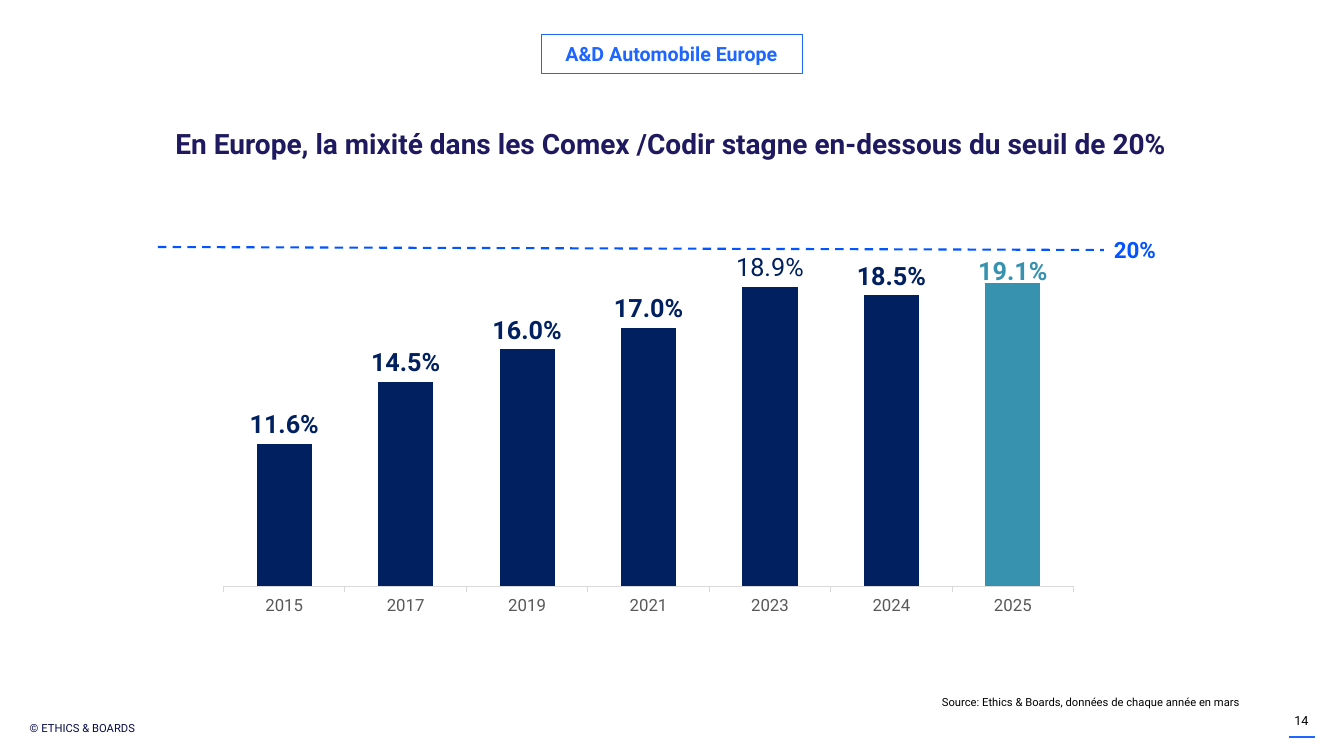
from lxml.etree import SubElement
from pptx import Presentation
from pptx.chart.data import CategoryChartData
from pptx.dml.color import RGBColor
from pptx.enum.chart import XL_CHART_TYPE, XL_LABEL_POSITION, XL_TICK_LABEL_POSITION, XL_TICK_MARK
from pptx.enum.dml import MSO_LINE
from pptx.enum.shapes import MSO_CONNECTOR, MSO_SHAPE
from pptx.enum.text import MSO_ANCHOR, MSO_AUTO_SIZE, PP_ALIGN
from pptx.oxml import parse_xml
from pptx.oxml.ns import nsdecls, qn
from pptx.util import Emu, Pt

PX = 914400 / 100.8
FONT = "Roboto"
BLUE, DASH_BLUE, NAVY, TEAL = "1E66FF", "0353FF", "002060", "3792B0"
RATES = {"2015": 0.116, "2017": 0.145, "2019": 0.16, "2021": 0.17,
         "2023": 0.189, "2024": 0.185, "2025": 0.191}


def px(length):
    """Turn a length in px into EMU."""
    return Emu(round(length * PX))


def color(value):
    """Turn a hex string into a colour."""
    return RGBColor.from_string(value)


def set_attributes(target, **values):
    """Set each named attribute of the target."""
    for name, value in values.items():
        setattr(target, name, value)


def style_font(font, size, hex_color, bold=False):
    """Give a font its face, size, colour and weight."""
    set_attributes(font, name=FONT, size=Pt(size), bold=bold)
    font.color.rgb = color(hex_color)


def style_line(line, hex_color, width):
    """Give a line its colour and width."""
    line.color.rgb = color(hex_color)
    line.width = Pt(width)


def write(shape, text, size, hex_color, bold=False, align=PP_ALIGN.CENTER,
          anchor=MSO_ANCHOR.MIDDLE, wrap=True):
    """Fill a shape with one formatted paragraph."""
    frame = shape.text_frame
    set_attributes(frame, text=text, word_wrap=wrap, vertical_anchor=anchor,
                   auto_size=MSO_AUTO_SIZE.NONE)
    paragraph = frame.paragraphs[0]
    paragraph.alignment = align
    style_font(paragraph.runs[0].font, size, hex_color, bold)


def add_text(slide, box, *content, **options):
    """Add a text box."""
    write(slide.shapes.add_textbox(*map(px, box)), *content, **options)


def add_title(slide, box, *content, **options):
    """Move and fill the title placeholder."""
    title = slide.shapes.title
    set_attributes(title, **dict(zip(("left", "top", "width", "height"), map(px, box))))
    write(title, *content, **options)


def add_tag(slide, box, *content, **options):
    """Add an outlined rectangle with text."""
    tag = slide.shapes.add_shape(MSO_SHAPE.RECTANGLE, *map(px, box))
    tag.shadow.inherit = False
    tag.fill.background()
    style_line(tag.line, BLUE, 0.5)
    write(tag, *content, **options)


def add_line(slide, ends, hex_color, dash=None):
    """Add a straight line."""
    line = slide.shapes.add_connector(MSO_CONNECTOR.STRAIGHT, *map(px, ends))
    style_line(line.line, hex_color, 1.5)
    line.line.dash_style = dash
    SubElement(line._element.spPr, qn("a:effectLst"))


def manual_layout(**values):
    """Build a manual chart layout."""
    items = "".join(f'<c:{name} val="{value}"/>' for name, value in values.items())
    return parse_xml(f'<c:layout {nsdecls("c")}><c:manualLayout>{items}'
                     '</c:manualLayout></c:layout>')


def style_axes(chart):
    """Show only the year axis."""
    set_attributes(chart.value_axis, minimum_scale=0.05, maximum_scale=0.2,
                   has_major_gridlines=False, visible=False)
    years = chart.category_axis
    set_attributes(years, major_tick_mark=XL_TICK_MARK.OUTSIDE,
                   minor_tick_mark=XL_TICK_MARK.NONE, has_major_gridlines=False,
                   tick_label_position=XL_TICK_LABEL_POSITION.LOW)
    style_line(years.format.line, "D9D9D9", 0.75)
    style_font(years.tick_labels.font, 12, "595959")


def style_labels(plot, series):
    """Label the bars, with 2023 in regular weight and 2025 in teal."""
    plot.has_data_labels = True
    labels = series.data_labels
    set_attributes(labels, show_value=True, number_format="0.0%",
                   number_format_is_linked=False, position=XL_LABEL_POSITION.OUTSIDE_END)
    style_font(labels.font, 18, NAVY, True)

    years = list(RATES)
    regular = series.points[years.index("2023")].data_label
    regular.text_frame.text = f"{RATES['2023']:.1%}"
    style_font(regular.text_frame.paragraphs[0].runs[0].font, 18, NAVY)
    regular.position = XL_LABEL_POSITION.OUTSIDE_END

    latest = series.points[years.index("2025")].data_label
    style_font(latest.font, 18, TEAL, True)
    latest.position = XL_LABEL_POSITION.OUTSIDE_END
    label_element = latest.font._element.getparent().getparent().getparent().getparent()
    label_element.find(qn("c:idx")).addnext(manual_layout(x=0, y=0.02))


def add_rate_chart(slide, box):
    """Add the column chart of rates by year."""
    data = CategoryChartData(number_format="0.0%")
    data.categories = list(RATES)
    data.add_series("Series 1", list(RATES.values()))
    chart = slide.shapes.add_chart(XL_CHART_TYPE.COLUMN_CLUSTERED, *map(px, box), data).chart
    set_attributes(chart, has_legend=False, has_title=False)
    style_font(chart.font, 10, "000000")
    style_axes(chart)

    plot = chart.plots[0]
    set_attributes(plot, gap_width=120, vary_by_categories=False)
    series = plot.series[0]
    latest = series.points[len(RATES) - 1]
    for bar, hex_color in ((series, NAVY), (latest, TEAL)):
        bar.format.fill.solid()
        bar.format.fill.fore_color.rgb = color(hex_color)
    style_labels(plot, series)

    plot_area = chart._chartSpace.chart.plotArea
    for layout in plot_area.findall(qn("c:layout")):
        plot_area.remove(layout)
    plot_area.insert(0, manual_layout(layoutTarget="inner", xMode="edge", yMode="edge",
                                      x=0, y=0.06, w=0.97, h=0.8))


def main():
    """Build the slide and save it."""
    presentation = Presentation()
    set_attributes(presentation, slide_width=px(1344), slide_height=px(756))
    slide = presentation.slides.add_slide(presentation.slide_layouts[5])

    add_text(slide, (15, 718, 135, 21), "© ETHICS & BOARDS", 8, "060A4A")
    add_line(slide, (1289, 737, 1315, 737), BLUE)
    add_text(slide, (1281, 705, 41, 30), "14", 9, "000000")
    add_rate_chart(slide, (223, 239, 877, 404))
    add_title(slide, (63, 121, 1216, 44),
              "En Europe, la mixité dans les Comex /Codir stagne en-dessous du seuil de 20%",
              20, "1F1A5F", bold=True)
    add_text(slide, (932, 690, 342, 24),
             "Source: Ethics & Boards, données de chaque année en mars", 8, "000000",
             align=PP_ALIGN.LEFT, anchor=MSO_ANCHOR.TOP)
    add_tag(slide, (541, 34, 261, 39), "A&D Automobile Europe", 14, BLUE, bold=True)
    add_line(slide, (158, 247, 1104, 250), DASH_BLUE, MSO_LINE.DASH)
    add_text(slide, (1104, 231, 62, 37), "20%", 16, DASH_BLUE, bold=True,
             align=PP_ALIGN.LEFT, anchor=MSO_ANCHOR.TOP, wrap=False)
    presentation.save("out.pptx")


if __name__ == "__main__":
    main()
